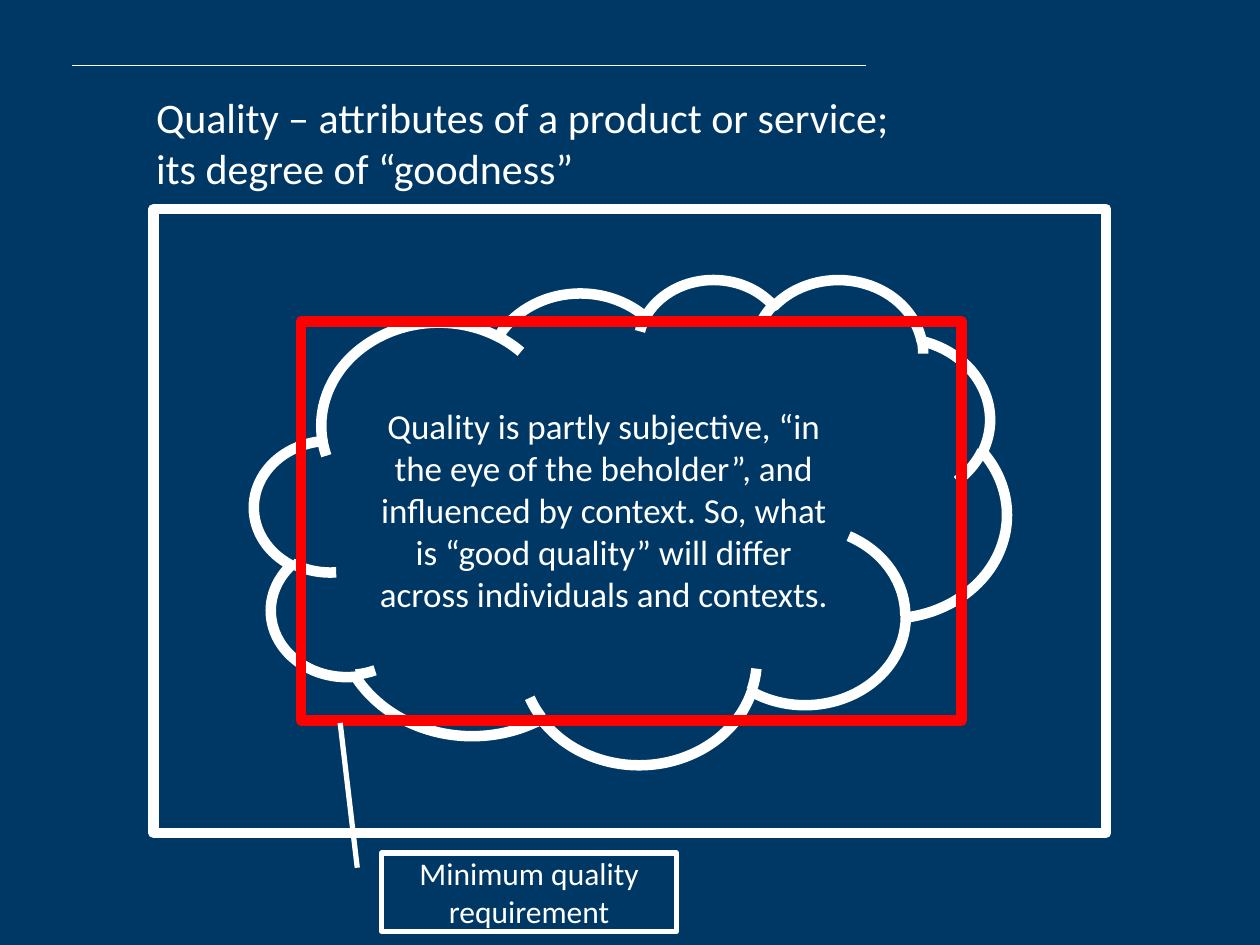
from dataclasses import dataclass
from pptx import Presentation
from pptx.dml.color import RGBColor
from pptx.enum.shapes import MSO_CONNECTOR as Connector, MSO_SHAPE as Shape
from pptx.enum.text import MSO_ANCHOR as Anchor, MSO_AUTO_SIZE as AutoSize, PP_ALIGN as Align
from pptx.oxml.ns import qn
from pptx.util import Pt
from lxml.etree import SubElement

COLORS = {"navy": "003865", "white": "FFFFFF", "red": "FF0000"}
FONT = "Calibri"


@dataclass
class Outline:
    kind: Shape
    left: float
    top: float
    width: float
    height: float
    color: str = "white"
    weight: float = 6
    text: str = ""
    size: float = 18
    adjustments: tuple[float, ...] = ()


OUTER_FRAME = Outline(Shape.RECTANGLE, 87.84, 119.52, 544.32, 356.4)
CLOUD = Outline(
    Shape.CLOUD, 145.44, 159.12, 429.84, 277.2, size=20,
    text="Quality is partly subjective, “in the eye of the beholder”, and influenced "
         "by context. So, what is “good quality” will differ across individuals and contexts.",
)
MINIMUM_FRAME = Outline(Shape.RECTANGLE, 172.08, 183.6, 377.28, 228.24, color="red")
CALLOUT = Outline(
    Shape.LINE_CALLOUT_1, 218.16, 487.44, 168.48, 44.64, weight=3,
    text="Minimum quality requirement", adjustments=(0.188, -0.083, -1.666, -0.141),
)


def rgb(name: str) -> RGBColor:
    return RGBColor.from_string(COLORS[name])


def write_text(frame, text: str, *, size: float, align=Align.LEFT, anchor=Anchor.TOP) -> None:
    frame.word_wrap = True
    frame.vertical_anchor = anchor
    para = frame.paragraphs[0]
    para.alignment = align
    span = para.add_run()
    span.text = text
    span.font.name = FONT
    span.font.size = Pt(size)
    span.font.color.rgb = rgb("white")


def draw_outline(page, outline: Outline) -> None:
    shape = page.shapes.add_shape(
        outline.kind, Pt(outline.left), Pt(outline.top), Pt(outline.width), Pt(outline.height)
    )
    shape.shadow.inherit = False
    shape.fill.background()
    shape.line.color.rgb = rgb(outline.color)
    shape.line.width = Pt(outline.weight)
    for index, value in enumerate(outline.adjustments):
        shape.adjustments[index] = value
    if outline.text:
        write_text(shape.text_frame, outline.text, size=outline.size,
                   align=Align.CENTER, anchor=Anchor.MIDDLE)


def draw_rule(page, left: float, right: float, top: float) -> None:
    rule = page.shapes.add_connector(Connector.STRAIGHT, Pt(left), Pt(top), Pt(right), Pt(top))
    rule.line.color.rgb = rgb("white")
    rule.line.width = Pt(0.75)
    SubElement(rule.element.spPr, qn("a:effectLst"))


def draw_heading(page, text: str) -> None:
    box = page.shapes.add_textbox(Pt(82.08), Pt(48.96), Pt(452.88), Pt(65.52))
    write_text(box.text_frame, text, size=24)
    box.text_frame.auto_size = AutoSize.SHAPE_TO_FIT_TEXT


def main() -> None:
    """Build the slide on quality and its minimum requirement."""
    deck = Presentation()
    deck.slide_width, deck.slide_height = Pt(720), Pt(540)
    page = deck.slides.add_slide(deck.slide_layouts[6])
    page.background.fill.solid()
    page.background.fill.fore_color.rgb = rgb("navy")
    draw_rule(page, 41.04, 494.64, 37.44)
    draw_outline(page, OUTER_FRAME)
    draw_outline(page, CLOUD)
    draw_heading(page, "Quality – attributes of a product or service; its degree of “goodness”")
    draw_outline(page, MINIMUM_FRAME)
    draw_outline(page, CALLOUT)
    deck.save("out.pptx")


if __name__ == "__main__":
    main()
